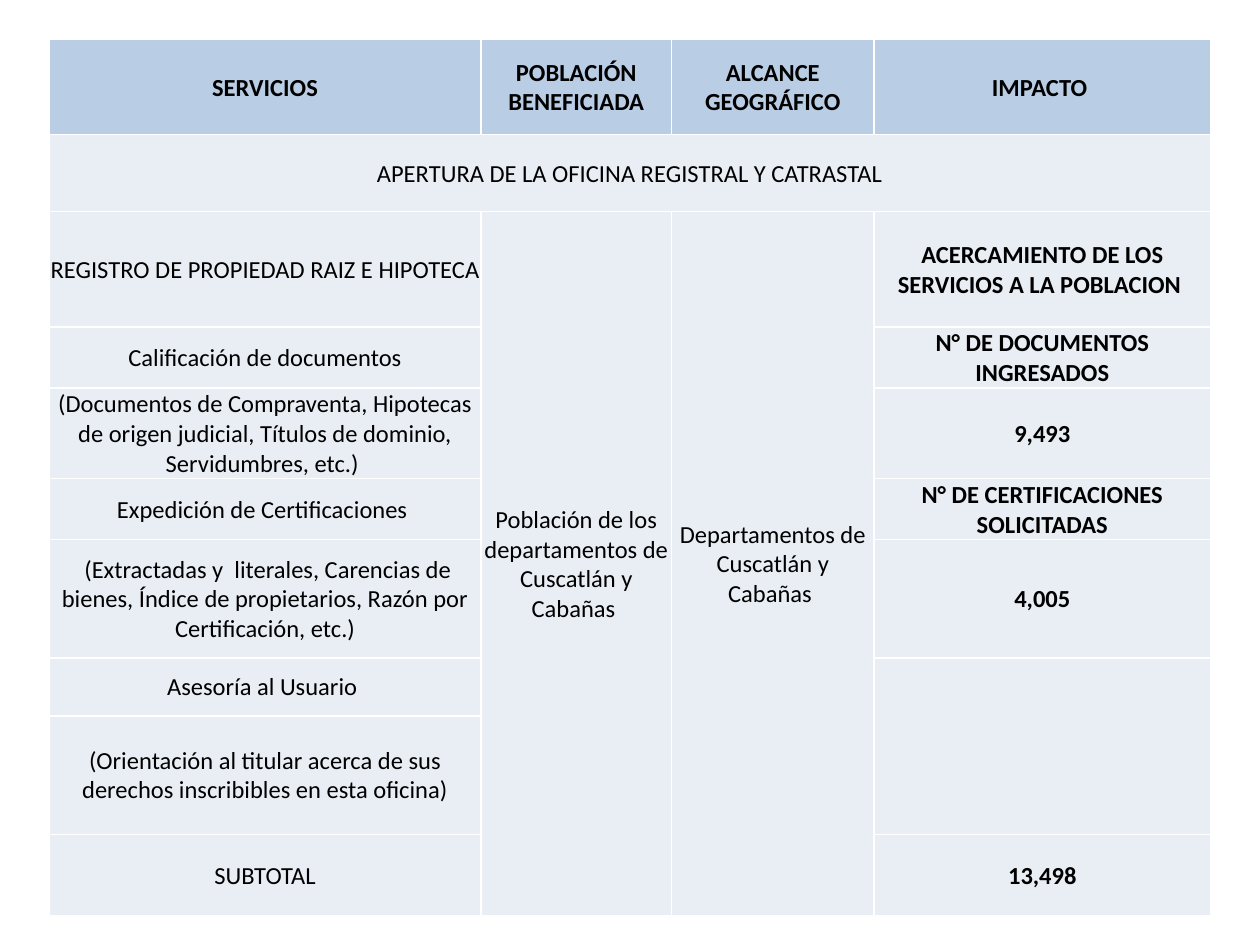
from dataclasses import dataclass

from lxml.etree import SubElement
from pptx import Presentation
from pptx.dml.color import RGBColor as RGB
from pptx.enum.text import MSO_ANCHOR as Anchor, PP_ALIGN as Align
from pptx.oxml.ns import qn
from pptx.util import Pt


@dataclass(frozen=True)
class Theme:
    font: str = "Calibri"
    size: float = 14
    text: str = "000000"
    header: str = "B9CDE5"
    body: str = "E9EDF4"
    border: str = "FFFFFF"
    border_width: float = 1


THEME = Theme()
LEFT, TOP = 28, 22.5
COLUMN_WIDTHS = [247, 108.7, 115.9, 192.2]
ROW_HEIGHTS = [54.5, 44, 66, 33, 49.7, 33, 67.7, 33, 67.7, 46.8]
IMPACT_COLUMN = 3

ROWS = [
    ["SERVICIOS", "POBLACIÓN BENEFICIADA", "ALCANCE GEOGRÁFICO", "IMPACTO "],
    ["APERTURA DE LA OFICINA REGISTRAL Y CATRASTAL", "", "", ""],
    ["REGISTRO DE PROPIEDAD RAIZ E HIPOTECA",
     "Población de los departamentos de Cuscatlán y Cabañas ",
     "Departamentos de Cuscatlán y Cabañas ",
     "ACERCAMIENTO DE LOS SERVICIOS A LA POBLACION "],
    ["Calificación de documentos", "", "", "N° DE DOCUMENTOS INGRESADOS"],
    ["(Documentos de Compraventa, Hipotecas de origen judicial, "
     "Títulos de dominio, Servidumbres, etc.) ", "", "", "9,493"],
    ["Expedición de Certificaciones ", "", "", "N° DE CERTIFICACIONES SOLICITADAS"],
    [" (Extractadas y  literales, Carencias de bienes, Índice de propietarios, "
     "Razón por Certificación, etc.)", "", "", "4,005"],
    ["Asesoría al Usuario ", "", "", ""],
    ["(Orientación al titular acerca de sus derechos inscribibles en esta oficina)",
     "", "", ""],
    ["SUBTOTAL", "", "", "13,498"],
]
# First and last cell of each merged block, as (row, column)
MERGES = [((1, 0), (1, 3)), ((2, 1), (9, 1)), ((2, 2), (9, 2)), ((7, 3), (8, 3))]


def set_attrs(obj, values):
    for name, value in values.items():
        setattr(obj, name, value)


def add_borders(cell):
    """Draw all four edges; they must precede the fill in the cell properties."""
    tc_pr = cell._tc.get_or_add_tcPr()
    for edge in ("a:lnL", "a:lnR", "a:lnT", "a:lnB"):
        line = SubElement(tc_pr, qn(edge), w=str(Pt(THEME.border_width)))
        fill = SubElement(line, qn("a:solidFill"))
        SubElement(fill, qn("a:srgbClr"), val=THEME.border)


def format_cell(cell, text, fill, bold):
    add_borders(cell)
    cell.fill.solid()
    cell.fill.fore_color.rgb = RGB.from_string(fill)
    set_attrs(cell, {
        "vertical_anchor": Anchor.MIDDLE, "margin_left": Pt(0.7),
        "margin_right": Pt(0.7), "margin_top": Pt(0.7), "margin_bottom": 0,
    })
    if not text:
        return
    p = cell.text_frame.paragraphs[0]
    p.alignment = Align.CENTER
    r = p.add_run()
    r.text = text
    set_attrs(r.font, {"name": THEME.font, "size": Pt(THEME.size), "bold": bold})
    r.font.color.rgb = RGB.from_string(THEME.text)


def add_services_table(s):
    table = s.shapes.add_table(
        len(ROWS), len(COLUMN_WIDTHS), Pt(LEFT), Pt(TOP),
        Pt(sum(COLUMN_WIDTHS)), Pt(sum(ROW_HEIGHTS))).table
    for column, width in zip(table.columns, COLUMN_WIDTHS):
        column.width = Pt(width)
    for row, height in zip(table.rows, ROW_HEIGHTS):
        row.height = Pt(height)
    for i, texts in enumerate(ROWS):
        for j, text in enumerate(texts):
            format_cell(table.cell(i, j), text,
                        fill=THEME.body if i else THEME.header,
                        bold=i == 0 or j == IMPACT_COLUMN)
    for first, last in MERGES:
        table.cell(*first).merge(table.cell(*last))


def main():
    prs = Presentation()
    set_attrs(prs, {"slide_width": Pt(720), "slide_height": Pt(540)})
    s = prs.slides.add_slide(prs.slide_layouts[6])
    add_services_table(s)
    prs.save("out.pptx")


if __name__ == "__main__":
    main()
